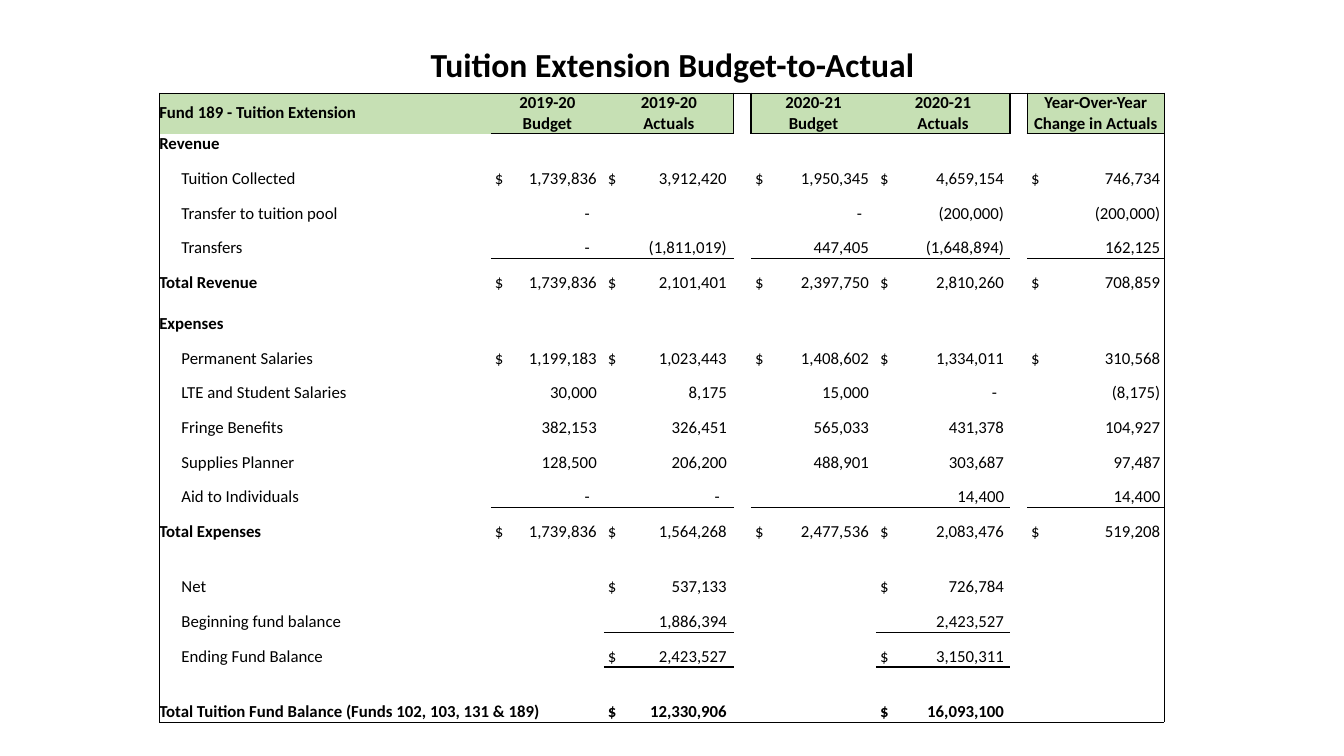
from collections import defaultdict

from lxml.etree import SubElement
from pptx import Presentation
from pptx.dml.color import RGBColor
from pptx.enum.text import MSO_ANCHOR, PP_ALIGN
from pptx.oxml.ns import qn
from pptx.util import Inches, Pt

COLORS = {"text": "000000", "line": "000000", "header": "C6E0B4"}
NO_GRID_STYLE = "{2D5ABB26-0587-4C30-8999-92F81FD0307C}"

COLUMN_WIDTHS = [0.22, 3.07, 1.12, 1.29, 0.17, 1.24, 1.33, 0.17, 1.36]
RIGHT_INSETS = {2: 0.07, 3: 0.07, 5: 0.07, 6: 0.06, 8: 0.04}
VALUE_COLUMNS = list(RIGHT_INSETS)
ACTUALS_COLUMNS = [3, 6]
GAP_COLUMNS = [4, 7]
DOLLAR_INSET = 0.04
DASH_INSET = 0.07

TABLE_HEIGHT = 6.22
SHORT_HEIGHT = 0.2
SHORT_ROWS = [0, 1, 2, 7, 8, 15, 19]

HEADERS = [
    ["2019-20", "2019-20", "2020-21", "2020-21", "Year-Over-Year"],
    ["Budget", "Actuals", "Budget", "Actuals", "Change in Actuals"],
]
SECTIONS = {
    2: "Revenue",
    6: "Total Revenue",
    8: "Expenses",
    14: "Total Expenses",
    20: "Total Tuition Fund Balance (Funds 102, 103, 131 & 189)",
}
ITEMS = {
    3: "Tuition Collected",
    4: "Transfer to tuition pool",
    5: "Transfers",
    9: "Permanent Salaries",
    10: "LTE and Student Salaries",
    11: "Fringe Benefits",
    12: "Supplies Planner",
    13: "Aid to Individuals",
    16: "Net",
    17: "Beginning fund balance",
    18: "Ending Fund Balance",
}
VALUES = {
    3: ["$ 1,739,836", "$ 3,912,420", "$ 1,950,345", "$ 4,659,154", "$ 746,734"],
    4: ["-", "", "-", "(200,000)", "(200,000)"],
    5: ["-", "(1,811,019)", "447,405", "(1,648,894)", "162,125"],
    6: ["$ 1,739,836", "$ 2,101,401", "$ 2,397,750", "$ 2,810,260", "$ 708,859"],
    9: ["$ 1,199,183", "$ 1,023,443", "$ 1,408,602", "$ 1,334,011", "$ 310,568"],
    10: ["30,000", "8,175", "15,000", "-", "(8,175)"],
    11: ["382,153", "326,451", "565,033", "431,378", "104,927"],
    12: ["128,500", "206,200", "488,901", "303,687", "97,487"],
    13: ["-", "-", "", "14,400", "14,400"],
    14: ["$ 1,739,836", "$ 1,564,268", "$ 2,477,536", "$ 2,083,476", "$ 519,208"],
    16: ["", "$ 537,133", "", "$ 726,784", ""],
    17: ["", "1,886,394", "", "2,423,527", ""],
    18: ["", "$ 2,423,527", "", "$ 3,150,311", ""],
    20: ["", "$ 12,330,906", "", "$ 16,093,100", ""],
}
ROW_COUNT = max(SECTIONS) + 1
LAST_ROW, LAST_COLUMN = ROW_COUNT - 1, len(COLUMN_WIDTHS) - 1


class BudgetSlide:
    def __init__(self, presentation, font="Calibri", size=12):
        self.font, self.size = font, size
        self.slide = presentation.slides.add_slide(presentation.slide_layouts[5])
        self.borders = defaultdict(dict)

    def style(self, paragraph, size, bold, alignment):
        paragraph.alignment = alignment
        paragraph.font.name = self.font
        paragraph.font.size = Pt(size)
        paragraph.font.bold = bold
        paragraph.font.color.rgb = RGBColor.from_string(COLORS["text"])

    def title(self, text):
        shape = self.slide.shapes.title
        shape.left, shape.top = Inches(0.92), Inches(0.4)
        shape.width, shape.height = Inches(11.5), Inches(0.52)
        frame = shape.text_frame
        frame.text = text
        frame.vertical_anchor = MSO_ANCHOR.MIDDLE
        paragraph = frame.paragraphs[0]
        paragraph.line_spacing = 0.9
        self.style(paragraph, 24, True, PP_ALIGN.CENTER)

    def table(self):
        """Add an empty table with no style, no fills and no cell margins."""
        frame = self.slide.shapes.add_table(
            ROW_COUNT, len(COLUMN_WIDTHS), Inches(1.58), Inches(0.92),
            Inches(sum(COLUMN_WIDTHS)), Inches(TABLE_HEIGHT))
        table = self.grid = frame.table
        table.first_row = table.horz_banding = False
        table._tbl.tblPr.find(qn("a:tableStyleId")).text = NO_GRID_STYLE
        for column, width in zip(table.columns, COLUMN_WIDTHS):
            column.width = Inches(width)
        short_total = SHORT_HEIGHT * len(SHORT_ROWS)
        tall_height = (TABLE_HEIGHT - short_total) / (ROW_COUNT - len(SHORT_ROWS))
        for index, row in enumerate(table.rows):
            row.height = Inches(SHORT_HEIGHT if index in SHORT_ROWS else tall_height)
        for cell in table.iter_cells():
            cell.margin_left = cell.margin_right = 0
            cell.margin_top = cell.margin_bottom = 0
            cell.vertical_anchor = MSO_ANCHOR.BOTTOM
            cell.fill.background()

    def text(self, row, column, text, bold=False, alignment=PP_ALIGN.LEFT):
        cell = self.grid.cell(row, column)
        cell.text = text
        self.style(cell.text_frame.paragraphs[0], self.size, bold, alignment)
        return cell

    def header(self, row, column, text):
        self.text(row, column, text, True, PP_ALIGN.CENTER)

    def section(self, row, text, columns=2, rows=1):
        cell = self.text(row, 0, text, True)
        cell.merge(self.grid.cell(row + rows - 1, columns - 1))
        return cell

    def value(self, row, column, text, bold):
        """Right-align a number; a dollar sign stays at the left of the cell."""
        inset = RIGHT_INSETS[column]
        if text.startswith("$"):
            cell = self.text(row, column, text.replace(" ", "\t"), bold)
            cell.margin_left = Inches(DOLLAR_INSET)
            stop = Inches(COLUMN_WIDTHS[column] - DOLLAR_INSET - inset)
            properties = cell.text_frame.paragraphs[0]._p.get_or_add_pPr()
            tabs = properties.makeelement(qn("a:tabLst"))
            SubElement(tabs, qn("a:tab"), pos=str(stop), algn="r")
            properties.find(qn("a:defRPr")).addprevious(tabs)
        else:
            cell = self.text(row, column, text, bold, PP_ALIGN.RIGHT)
            cell.margin_right = Inches(inset + (DASH_INSET if text == "-" else 0))

    def shade(self, row, column):
        fill = self.grid.cell(row, column).fill
        fill.solid()
        fill.fore_color.rgb = RGBColor.from_string(COLORS["header"])

    def rule_below(self, row, columns, width):
        for column in columns:
            self.borders[row, column]["B"] = width

    def frame(self, width):
        for row in range(ROW_COUNT):
            self.borders[row, 0]["L"] = self.borders[row, LAST_COLUMN]["R"] = width
        for column in range(LAST_COLUMN + 1):
            self.borders[0, column]["T"] = width
        self.rule_below(LAST_ROW, range(LAST_COLUMN + 1), width)

    def frame_header_gap(self, row, column, width):
        for left_neighbour in (column - 1, column):
            self.borders[row, left_neighbour]["R"] = width

    def finish(self):
        """Write the collected borders and keep blank cells at the text size."""
        for (row, column), sides in self.borders.items():
            properties = self.grid.cell(row, column)._tc.get_or_add_tcPr()
            for position, side in enumerate(s for s in "LRTB" if s in sides):
                line = properties.makeelement(qn(f"a:ln{side}"), w=str(Pt(sides[side])))
                fill = SubElement(line, qn("a:solidFill"))
                SubElement(fill, qn("a:srgbClr"), val=COLORS["line"])
                properties.insert(position, line)
        for cell in self.grid.iter_cells():
            if not cell.text:
                paragraph = cell.text_frame.paragraphs[0]._p
                SubElement(paragraph, qn("a:endParaRPr"), sz=str(self.size * 100))


def main():
    presentation = Presentation()
    presentation.slide_width, presentation.slide_height = Inches(13.33), Inches(7.5)
    budget = BudgetSlide(presentation)
    budget.title("Tuition Extension Budget-to-Actual")
    budget.table()

    for row, labels in enumerate(HEADERS):
        for column, label in zip(VALUE_COLUMNS, labels):
            budget.header(row, column, label)
        for column in [0, 1, *VALUE_COLUMNS]:
            budget.shade(row, column)
        for column in GAP_COLUMNS:
            budget.frame_header_gap(row, column, 1)
    fund = budget.section(0, "Fund 189 - Tuition Extension", rows=2)
    fund.vertical_anchor = MSO_ANCHOR.MIDDLE

    for row, label in SECTIONS.items():
        budget.section(row, label, columns=3 if row == LAST_ROW else 2)
    for row, label in ITEMS.items():
        budget.text(row, 1, label)
    for row, amounts in VALUES.items():
        for column, amount in zip(VALUE_COLUMNS, amounts):
            if amount:
                budget.value(row, column, amount, row == LAST_ROW)

    budget.frame(0.25)
    budget.rule_below(1, [0, 1, *VALUE_COLUMNS], 1)
    for row in (5, 13):
        budget.rule_below(row, VALUE_COLUMNS, 0.5)
    budget.rule_below(17, ACTUALS_COLUMNS, 0.5)
    budget.rule_below(18, ACTUALS_COLUMNS, 2)
    budget.finish()
    presentation.save("out.pptx")


if __name__ == "__main__":
    main()
